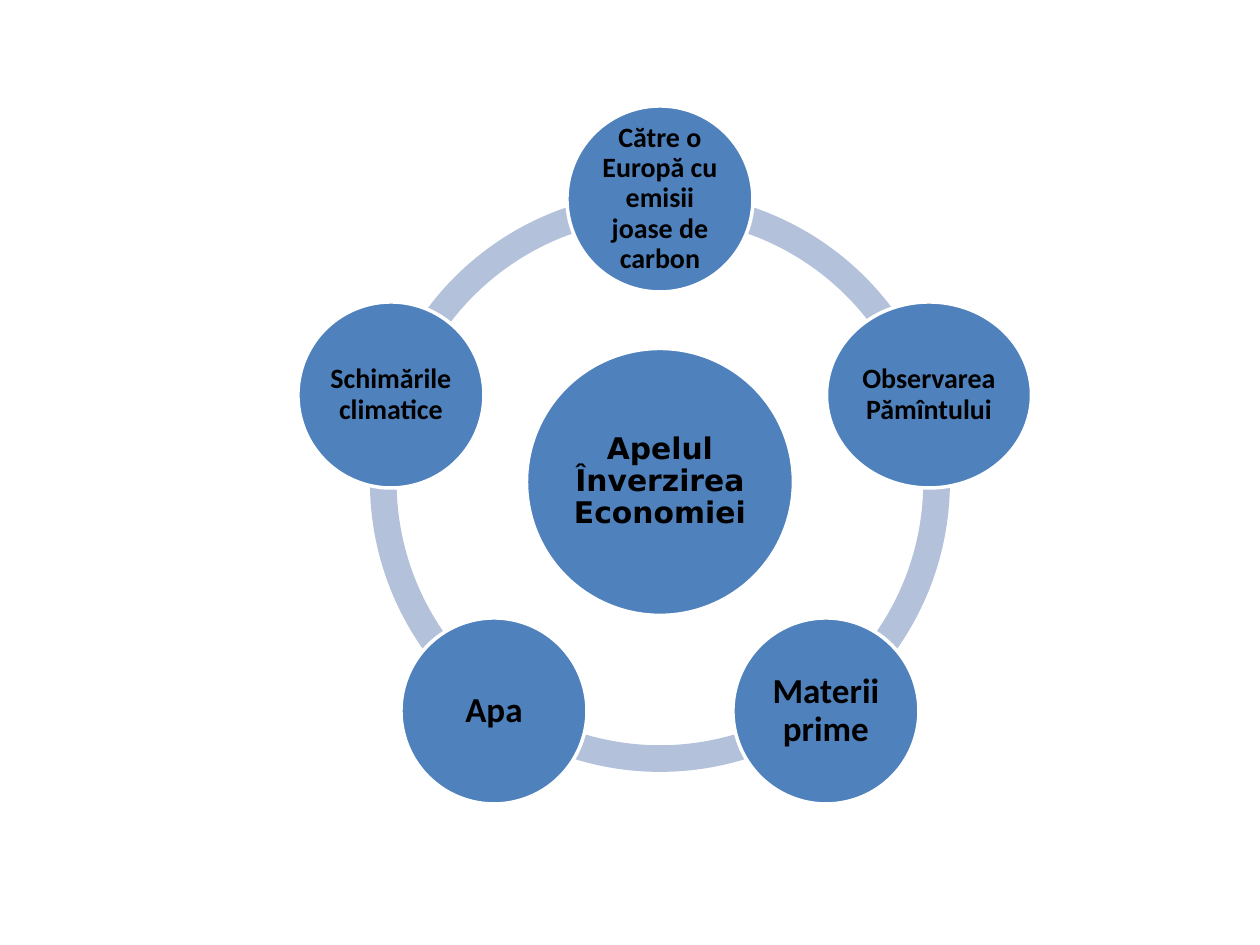
"""Build a slide with a radial cycle of five themes around a central call."""
import math
import pptx
import pptx.util
import pptx.dml.color
import pptx.enum.shapes
import pptx.enum.text

SCALE = 914400 / 126
THEME = {
    "disc": "4F81BD", "edge": "FFFFFF", "ring": "B3C1DB", "text": "000000",
    "body": "Calibri", "head": "DejaVu Sans",
    "small": 16, "mid": 17, "large": 20, "line": 2,
}
KIND = pptx.enum.shapes.MSO_SHAPE


def put(kind, mid_x, mid_y, wide, high, fill):
    box = [(mid_x - wide / 2), (mid_y - high / 2), wide, high]
    shape = slide.shapes.add_shape(kind, *[round(side * SCALE) for side in box])
    shape.shadow.inherit = False
    shape.fill.solid()
    shape.fill.fore_color.rgb = pptx.dml.color.RGBColor.from_string(THEME[fill])
    shape.line.fill.background()
    return shape


def disc(mid_x, mid_y, wide, high, words, size, face, inset):
    shape = put(KIND.OVAL, mid_x, mid_y, wide, high, "disc")
    shape.line.color.rgb = pptx.dml.color.RGBColor.from_string(THEME["edge"])
    shape.line.width = pptx.util.Pt(THEME["line"])
    frame = shape.text_frame
    frame.word_wrap = True
    frame.vertical_anchor = pptx.enum.text.MSO_ANCHOR.MIDDLE
    gap = round(inset * SCALE)
    frame.margin_left = frame.margin_right = gap
    frame.margin_top = frame.margin_bottom = gap
    para = frame.paragraphs[0]
    para.text = words
    para.alignment = pptx.enum.text.PP_ALIGN.CENTER
    para.line_spacing = 0.9
    para.font.name = THEME[face]
    para.font.size = pptx.util.Pt(THEME[size])
    para.font.bold = True
    para.font.color.rgb = pptx.dml.color.RGBColor.from_string(THEME["text"])


deck = pptx.Presentation()
deck.slide_width = round(1260 * SCALE)
deck.slide_height = round(945 * SCALE)
slide = deck.slides.add_slide(deck.slide_layouts[6])

HUB_X, HUB_Y, ORBIT = 660, 482, 283
NODES = [
    ("Către o Europă cu emisii joase de carbon", 186, "small", 3),
    ("Observarea Pămîntului", 205, "small", 3),
    ("Materii prime", 186, "large", 4),
    ("Apa", 186, "large", 4),
    ("Schimările climatice", 186, "small", 3),
]
STEP = 360 // len(NODES)

for turn in reversed(range(len(NODES))):
    start = (270 + turn * STEP) % 360
    arc = put(KIND.BLOCK_ARC, HUB_X, HUB_Y, 580, 580, "ring")
    arc.adjustments[0] = start * 0.6
    arc.adjustments[1] = (start + STEP) % 360 * 0.6
    arc.adjustments[2] = 0.046

disc(HUB_X, HUB_Y, 267, 267, "Apelul Înverzirea Economiei", "mid", "head", 3)

for turn, (words, wide, size, inset) in enumerate(NODES):
    angle = math.radians(turn * STEP - 90)
    mid_x = HUB_X + round(ORBIT * math.cos(angle))
    mid_y = HUB_Y + round(ORBIT * math.sin(angle))
    disc(mid_x, mid_y, wide, 186, words, size, "body", inset)

deck.save("out.pptx")
